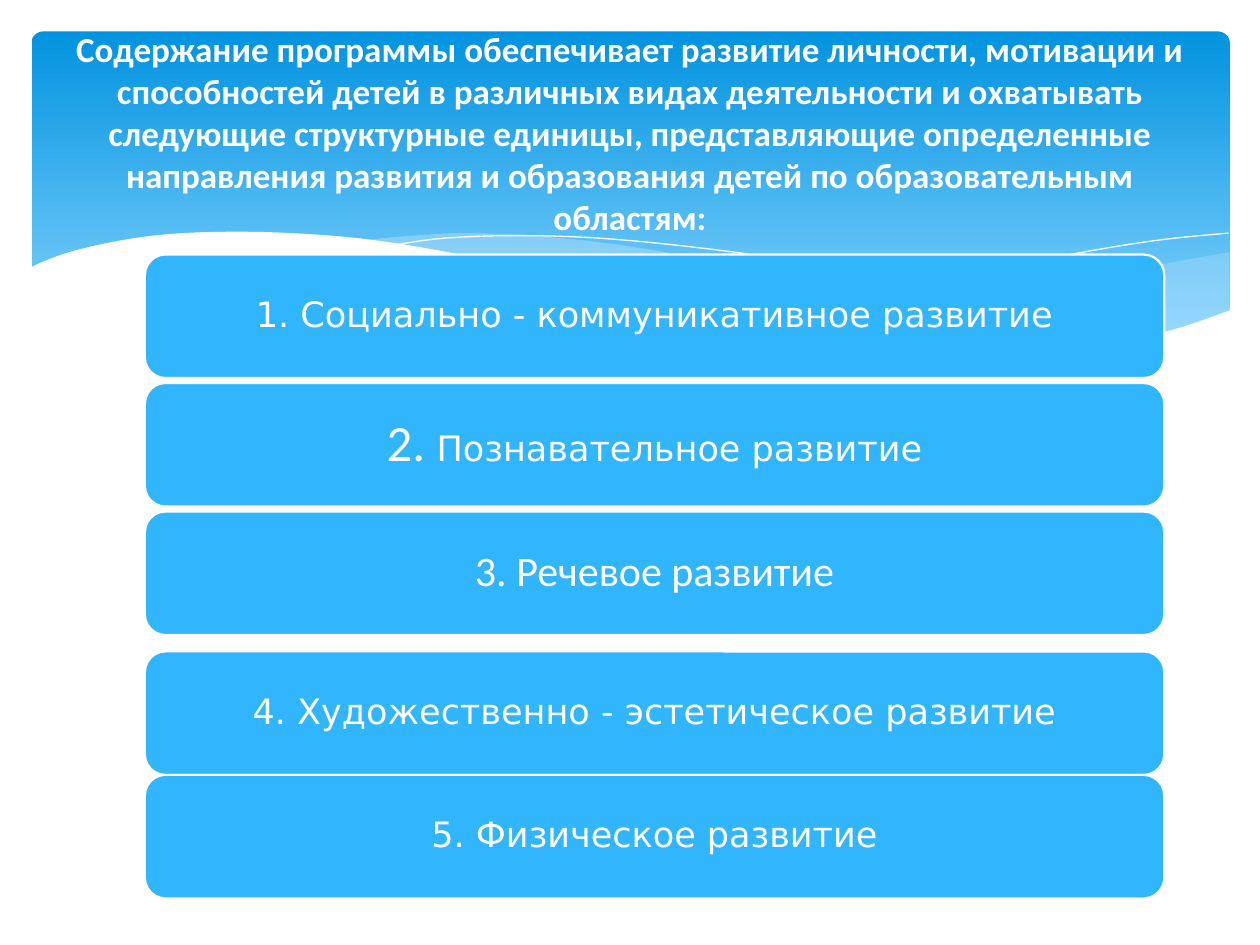
from dataclasses import dataclass

from lxml import etree
from pptx import Presentation
from pptx.dml.color import RGBColor
from pptx.enum import shapes, text
from pptx.oxml.ns import qn
from pptx.util import Emu, Inches, Pt

# Grid: 100 columns by 75 rows, each cell 0.1 inch
CELL = Inches(0.1)
COLS, ROWS = 100, 75
WHITE, BLUE, PALE = "FFFFFF", "31B6FD", "C6E7FC"
SANS, WIDE = "Calibri", "DejaVu Sans"
Point = tuple[float, float]

TITLE = (
    "Содержание программы обеспечивает развитие личности, мотивации и "
    "способностей детей в различных видах деятельности и охватывать "
    "следующие структурные единицы, представляющие определенные "
    "направления развития и образования детей по образовательным областям:"
)


@dataclass
class Run:
    text: str
    size: float = 20
    font: str = WIDE
    bold: bool = False


@dataclass
class Card:
    row: float
    runs: list[Run]


@dataclass
class Wave:
    edges: list[list[Point]]  # smooth edges, joined end to end
    fill: str | None = None
    opacity: int = 100


CARDS = [
    Card(20.2, [Run("1. Социально - коммуникативное развитие")]),
    Card(30.4, [Run("2. ", 29, SANS), Run("Познавательное развитие")]),
    Card(40.6, [Run("3. Речевое развитие", 24, SANS)]),
    Card(51.7, [Run("4. Художественно - эстетическое развитие")]),
    Card(61.5, [Run("5. Физическое развитие")]),
]

WAVES = [
    # Right-hand translucent wave
    Wave([[(97.6, 20), (92.1, 21), (86.1, 22.3), (75.3, 24.8), (66.1, 26.5)],
          [(66.1, 26.5), (73.2, 27.4), (80.3, 27.8), (87.2, 27.4),
           (93.5, 26.2), (97.6, 24.7)]], PALE, 29),
    # Middle translucent wave
    Wave([[(89.3, 27.3), (80.7, 26), (70.6, 24), (62.9, 22.2), (55.5, 20.5),
           (46.5, 19.1), (38, 18.5), (32.8, 18.7), (28.6, 19.1)],
          [(28.6, 19.1), (36.2, 20.3), (44.9, 22.2), (56.6, 24.8), (66.5, 26.6),
           (74.8, 27.6), (81.8, 27.8), (89.3, 27.3)]], PALE, 40),
    # Thin white crests
    Wave([[(30.9, 19.5), (35.3, 18.9), (41.6, 18.7), (48.9, 19), (58.2, 20),
           (66.5, 21.3), (76, 23.3), (83.1, 25.1), (90.7, 27.2)]]),
    Wave([[(61.3, 25.7), (69.5, 23.5), (77.6, 21.6), (86.6, 19.9),
           (92.4, 19), (97.5, 18.5)]]),
    # White foreground below the header
    Wave([[(97.7, 24.6), (93, 26.2), (87.5, 27.3), (80.9, 27.7), (72.6, 27.2),
           (62.6, 25.8), (52.9, 23.9), (44.7, 22), (36.5, 20.2), (29.2, 19),
           (23, 18.5), (17.7, 18.4), (13.2, 18.6), (9.5, 19.1), (5.9, 19.9),
           (3.6, 20.7), (2.3, 21.3)],
          [(2.3, 21.3), (2.3, 32.9)], [(2.3, 32.9), (97.7, 32.9)]], WHITE),
]


def color(hex_value: str) -> RGBColor:
    return RGBColor.from_string(hex_value)


def cells(*values: float) -> list[Emu]:
    return [Emu(round(v * CELL)) for v in values]


def smooth(points: list[Point], steps: int = 6) -> list[Point]:
    """Catmull-Rom curve through the points."""
    ends = [points[0], *points, points[-1]]
    curve = [points[0]]
    for a, b, c, d in zip(ends, ends[1:], ends[2:], ends[3:]):
        for t in (i / steps for i in range(1, steps + 1)):
            curve.append(tuple(
                0.5 * (2 * q + (r - p) * t + (2 * p - 5 * q + 4 * r - s) * t**2
                       + (3 * q - p - 3 * r + s) * t**3)
                for p, q, r, s in zip(a, b, c, d)))
    return curve


def draw_wave(slide, wave: Wave) -> None:
    points = [cells(*p) for edge in wave.edges for p in smooth(edge)]
    builder = slide.shapes.build_freeform(*points[0])
    builder.add_line_segments(points[1:], close=wave.fill is not None)
    sp = builder.convert_to_shape()
    sp.shadow.inherit = False
    if wave.fill is None:
        sp.fill.background()
        sp.line.color.rgb = color(WHITE)
        sp.line.width = Pt(0)
        return
    sp.line.fill.background()
    sp.fill.solid()
    sp.fill.fore_color.rgb = color(wave.fill)
    if wave.opacity < 100:
        rgb = sp.fill._xPr.find(".//" + qn("a:srgbClr"))
        etree.SubElement(rgb, qn("a:alpha"), val=str(wave.opacity * 1000))


def write(tf, runs: list[Run], spacing: float) -> None:
    tf.word_wrap = True
    tf.auto_size = text.MSO_AUTO_SIZE.NONE
    tf.vertical_anchor = text.MSO_ANCHOR.MIDDLE
    p = tf.paragraphs[0]
    p.alignment = text.PP_ALIGN.CENTER
    p.line_spacing = spacing
    for run in runs:
        r = p.add_run()
        r.text = run.text
        r.font.size, r.font.name, r.font.bold = Pt(run.size), run.font, run.bold
        r.font.color.rgb = color(WHITE)


def draw_header(slide) -> None:
    sp = slide.shapes.add_shape(shapes.MSO_SHAPE.ROUNDED_RECTANGLE,
                                *cells(2.5, 2.5, 95.1, 27))
    sp.adjustments[0] = 0.034
    sp.shadow.inherit = False
    sp.line.fill.background()
    sp.fill.gradient()
    sp.fill.gradient_angle = 270
    for stop, position, shade in zip(sp.fill.gradient_stops, (0, 0.9),
                                     ("0293E0", "83D3FE")):
        stop.position, stop.color.rgb = position, color(shade)


def draw_card(slide, card: Card) -> None:
    sp = slide.shapes.add_shape(shapes.MSO_SHAPE.ROUNDED_RECTANGLE,
                                *cells(11.5, card.row, 80.9, 9.8))
    sp.shadow.inherit = False
    sp.fill.solid()
    sp.fill.fore_color.rgb = color(BLUE)
    sp.line.color.rgb = color(WHITE)
    sp.line.width = Pt(1.25)
    write(sp.text_frame, card.runs, 0.9)


def main() -> None:
    prs = Presentation()
    prs.slide_width, prs.slide_height = cells(COLS, ROWS)
    slide = prs.slides.add_slide(prs.slide_layouts[5])

    # Header band and waves
    draw_header(slide)
    for wave in WAVES:
        draw_wave(slide, wave)

    # Educational areas
    for card in CARDS:
        draw_card(slide, card)

    # Title, brought in front of the band
    title = slide.shapes.title
    title.left, title.top, title.width, title.height = cells(5, 3.7, 90, 13.7)
    write(title.text_frame, [Run(TITLE, font=SANS, bold=True)], 1.0)
    slide.shapes._spTree.append(title._element)

    prs.save("out.pptx")


if __name__ == "__main__":
    main()
